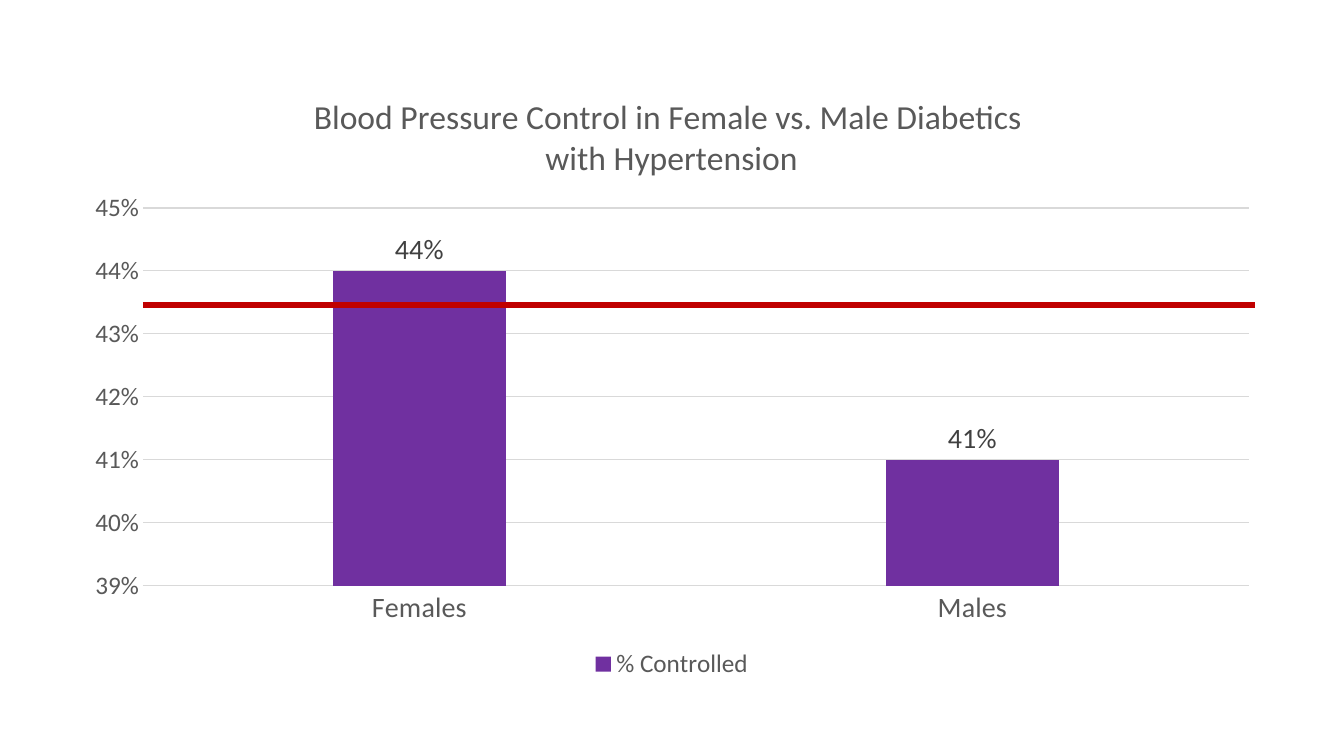
from lxml import etree
from pptx import Presentation
from pptx.chart.data import CategoryChartData
from pptx.dml.color import RGBColor
from pptx.enum import chart as kinds, shapes
from pptx.oxml import ns
from pptx.util import Pt

COLORS = {"bar": "7030A0", "target": "C00000", "grid": "D9D9D9",
          "text": "595959", "label": "404040"}
CHART = {"x": 50.4, "y": 50.4, "w": 859, "h": 438.5}
PLOT = {"x": 102.1, "y": 148.6, "w": 790, "h": 270}
TITLE = {"x": 222, "y": 66.5}


def style_font(font, size, color="text"):
    formats = {"name": "Calibri", "size": Pt(size), "bold": False}
    for name, value in formats.items():
        setattr(font, name, value)
    font.color.rgb = RGBColor.from_string(COLORS[color])


def place(part, position, box, target=None):
    """Fix a chart part at a box in slide points; its layout is child number position."""
    layout = part.find(ns.qn("c:layout"))
    if layout is None:
        layout = etree.Element(ns.qn("c:layout"))
        part.insert(position, layout)
    manual = etree.SubElement(layout, ns.qn("c:manualLayout"))
    settings = {"layoutTarget": target} if target else {}
    settings.update(xMode="edge", yMode="edge")
    for key, value in box.items():
        extent = "w" if key in "xw" else "h"
        offset = CHART[key] if key in "xy" else 0
        settings[key] = (value - offset) / CHART[extent]
    for key, value in settings.items():
        etree.SubElement(manual, ns.qn("c:" + key)).set("val", str(value))


deck = Presentation()
deck.slide_width, deck.slide_height = Pt(960), Pt(540)
page = deck.slides.add_slide(deck.slide_layouts[6])

# Column chart
data = CategoryChartData(number_format="0%")
data.categories = ["Females", "Males"]
data.add_series("% Controlled", [0.44, 0.41])
chart = page.shapes.add_chart(
    kinds.XL_CHART_TYPE.COLUMN_CLUSTERED,
    *(Pt(length) for length in CHART.values()), data).chart
style_font(chart.font, 18)

# Title
title = chart.chart_title
frame = title.text_frame
frame.text = "Blood Pressure Control in Female vs. Male Diabetics \nwith Hypertension"
for para in frame.paragraphs:
    for span in para.runs:
        style_font(span.font, 24)

# Fixed places of title and plot area
place(frame._element.getparent().getparent(), 1, TITLE)
place(chart._chartSpace.chart.plotArea, 0, PLOT, "inner")

# Bars and labels
plot = chart.plots[0]
plot.gap_width, plot.overlap, plot.vary_by_categories = 219, -27, False
bars = plot.series[0].format.fill
bars.solid()
bars.fore_color.rgb = RGBColor.from_string(COLORS["bar"])
plot.has_data_labels = True
labels = plot.data_labels
label_formats = {"show_value": True, "number_format": "0%",
                 "number_format_is_linked": False,
                 "position": kinds.XL_LABEL_POSITION.OUTSIDE_END}
for name, value in label_formats.items():
    setattr(labels, name, value)
style_font(labels.font, 20, "label")

# Axes
categories, values = chart.category_axis, chart.value_axis
for axis, size in ((categories, 20), (values, 18)):
    axis.major_tick_mark = axis.minor_tick_mark = kinds.XL_TICK_MARK.NONE
    style_font(axis.tick_labels.font, size)
values.minimum_scale, values.maximum_scale, values.major_unit = 0.39, 0.45, 0.01
values.has_major_gridlines = True
values.tick_labels.number_format = "0%"
values.tick_labels.number_format_is_linked = False
values.format.line.fill.background()
for line in (categories.format.line, values.major_gridlines.format.line):
    line.width = Pt(0.75)
    line.color.rgb = RGBColor.from_string(COLORS["grid"])

# Legend
chart.has_legend = True
chart.legend.position = kinds.XL_LEGEND_POSITION.BOTTOM
chart.legend.include_in_layout = False
style_font(chart.legend.font, 18)

# Target line
target = page.shapes.add_connector(
    shapes.MSO_CONNECTOR.STRAIGHT, Pt(102.1), Pt(218), Pt(896.4), Pt(218))
target.line.width = Pt(4.5)
target.line.color.rgb = RGBColor.from_string(COLORS["target"])
etree.SubElement(target._element.spPr, ns.qn("a:effectLst"))

deck.save("out.pptx")
